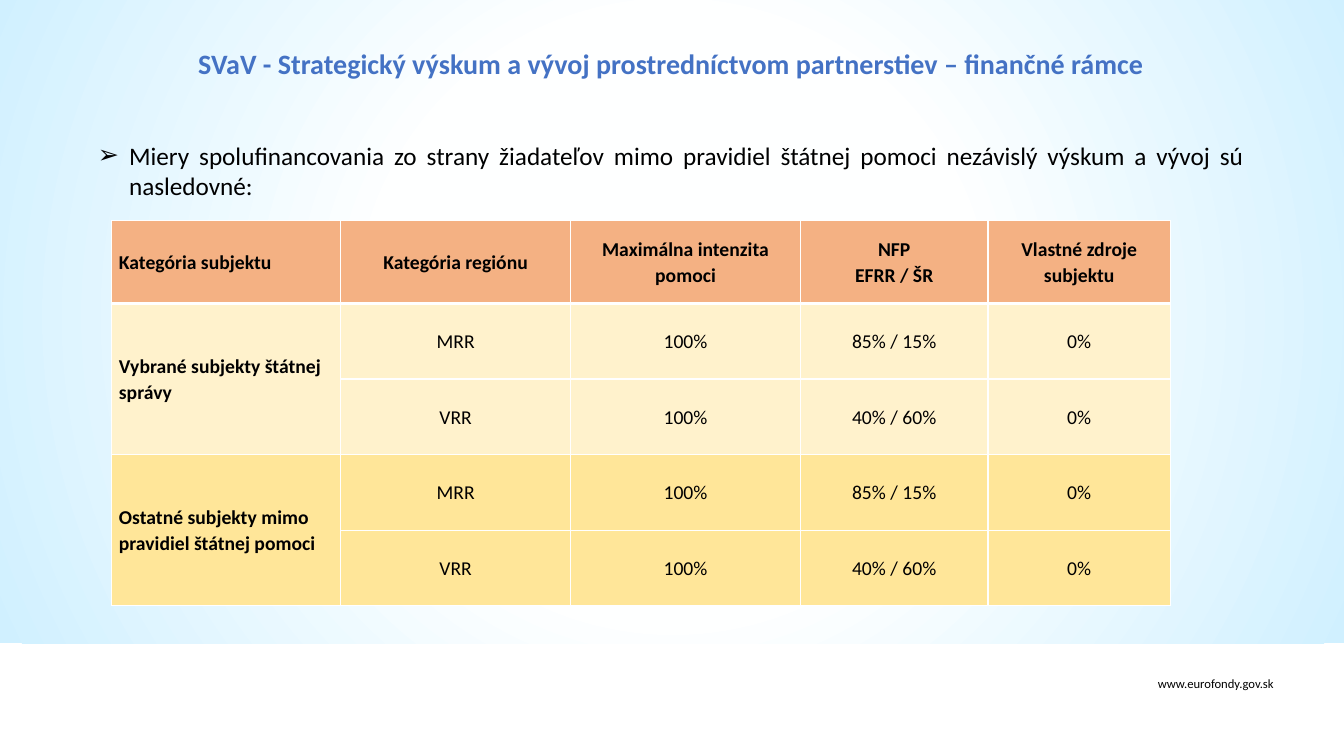
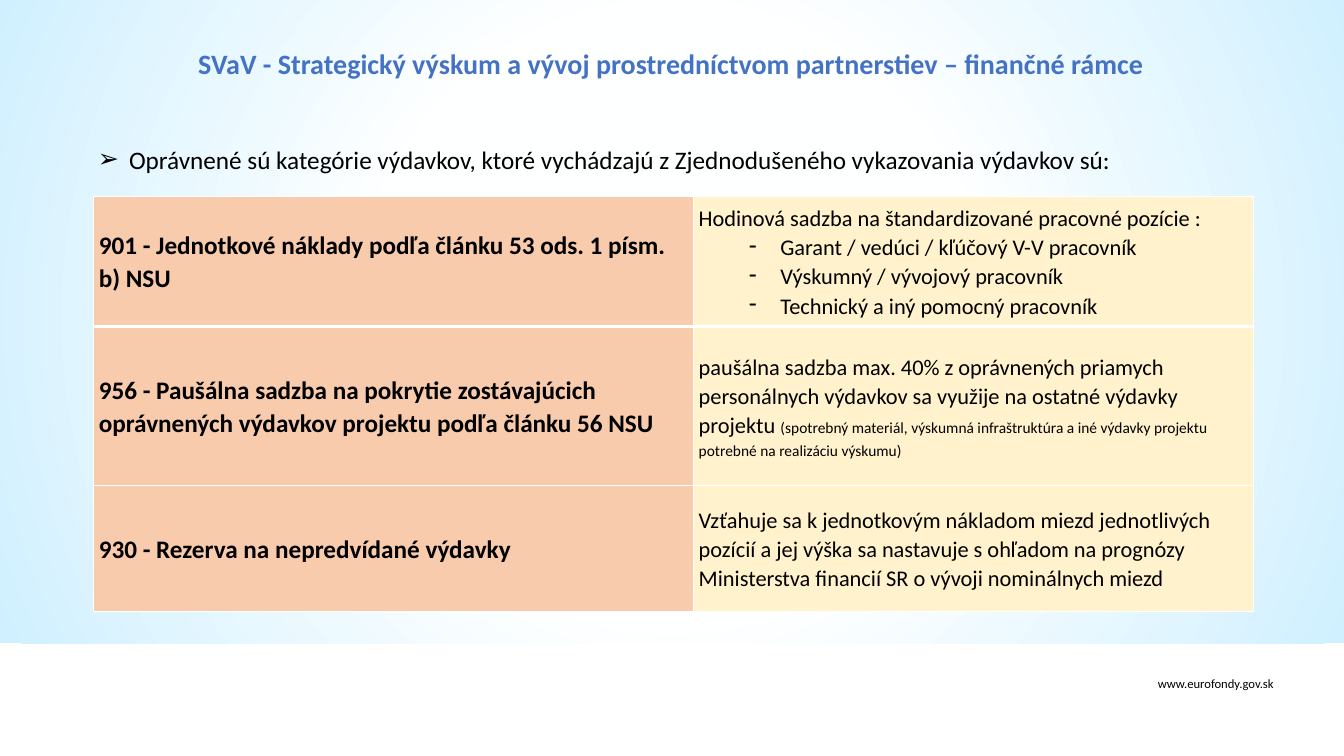
from lxml.etree import SubElement
from pptx import Presentation
from pptx.dml.color import RGBColor
from pptx.enum.shapes import MSO_SHAPE
from pptx.enum.text import MSO_ANCHOR as Anchor, MSO_AUTO_SIZE as Auto, PP_ALIGN as Align
from pptx.oxml import parse_xml
from pptx.oxml.ns import nsdecls, qn
from pptx.util import Inches, Pt

HUES = {
    "white": "FFFFFF", "text": "000000", "title": "4472C4",
    "glow": "FEFFFF", "sky": "D0F0FF", "head": "F4B183",
    "cream": "FFF2CC", "gold": "FFE699", "peach": "F8CBAD",
}
TITLE = "SVaV - Strategický výskum a vývoj prostredníctvom partnerstiev – finančné rámce"
SITE = "www.eurofondy.gov.sk"

RATES = [
    ["Kategória subjektu", "Kategória regiónu", "Maximálna intenzita pomoci",
     "NFP\nEFRR / ŠR", "Vlastné zdroje subjektu"],
    ["Vybrané subjekty štátnej správy", "MRR", "100%", "85% / 15%", "0%"],
    ["", "VRR", "100%", "40% / 60%", "0%"],
    ["Ostatné subjekty mimo pravidiel štátnej pomoci", "MRR", "100%", "85% / 15%", "0%"],
    ["", "VRR", "100%", "40% / 60%", "0%"],
]
COSTS = [
    ("901 - Jednotkové náklady podľa článku 53 ods. 1 písm. b) NSU",
     "Hodinová sadzba na štandardizované pracovné pozície :",
     ["Garant / vedúci / kľúčový V-V pracovník", "Výskumný / vývojový pracovník",
      "Technický a iný pomocný pracovník"], ""),
    ("956 - Paušálna sadzba na pokrytie zostávajúcich oprávnených výdavkov projektu "
     "podľa článku 56 NSU",
     "paušálna sadzba max. 40% z oprávnených priamych personálnych výdavkov sa využije "
     "na ostatné výdavky projektu ", [],
     "(spotrebný materiál, výskumná infraštruktúra a iné výdavky projektu potrebné na "
     "realizáciu výskumu)"),
    ("930 - Rezerva na nepredvídané výdavky",
     "Vzťahuje sa k jednotkovým nákladom miezd jednotlivých pozícií a jej výška sa "
     "nastavuje s ohľadom na prognózy Ministerstva financií SR o vývoji nominálnych miezd",
     [], ""),
]


def put(item, **form):
    """Set every attribute in the format dict."""
    for key, val in form.items():
        setattr(item, key, val)


def place(shape, left, top, width, height):
    """Move and size a shape, in inches."""
    put(shape, left=Inches(left), top=Inches(top),
        width=Inches(width), height=Inches(height))


def write(para, text, size, bold=False, hue="text"):
    """Add one formatted run to a paragraph."""
    run = para.add_run()
    run.text = text
    put(run.font, name="Calibri", size=Pt(size), bold=bold)
    run.font.color.rgb = RGBColor.from_string(HUES[hue])


def bullet(para, mark, left):
    """Give a paragraph a hanging bullet."""
    props = para._p.get_or_add_pPr()
    props.set("marL", str(Inches(left)))
    props.set("indent", str(Inches(-0.31)))
    SubElement(props, qn("a:buChar")).set("char", mark)


def glow(shape):
    """Fill a shape with the round sky gradient."""
    stops = "".join(
        f'<a:gs pos="{pos}000"><a:srgbClr val="{HUES[hue]}"/></a:gs>'
        for pos, hue in ((0, "glow"), (40, "glow"), (100, "sky")))
    shape.fill.background()
    props = shape.element.spPr
    blank = props.find(qn("a:noFill"))
    props.replace(blank, parse_xml(
        f'<a:gradFill {nsdecls("a")} rotWithShape="1"><a:gsLst>{stops}</a:gsLst>'
        '<a:path path="circle"><a:fillToRect l="50000" t="50000" r="50000" b="50000"/>'
        '</a:path></a:gradFill>'))


def dress(layout, slide):
    """Move the shared band, footer and title place to the layout."""
    band = slide.shapes.add_shape(
        MSO_SHAPE.RECTANGLE, 0, Inches(-0.1), Inches(13.35), Inches(6.48))
    band.shadow.inherit = False
    band.line.fill.background()
    glow(band)
    foot = slide.shapes.add_textbox(
        Inches(10.73), Inches(6.66), Inches(2), Inches(0.25))
    foot.text_frame.word_wrap = True
    para = foot.text_frame.paragraphs[0]
    para.alignment = Align.RIGHT
    write(para, SITE, 9)
    for spot, shape in enumerate((band, foot), 2):
        layout.shapes.element.insert(spot, shape.element)
    place(layout.placeholders[0], 0.87, 0.4, 11.57, 0.45)


def head(slide, text, top):
    """Write the title and the lead bullet."""
    frame = slide.shapes.title.text_frame
    put(frame, auto_size=Auto.NONE, vertical_anchor=Anchor.MIDDLE)
    write(frame.paragraphs[0], TITLE, 20, True, "title")
    body = slide.placeholders[1]
    place(body, 0.87, top, 11.57, 0.72)
    body.text_frame.auto_size = Auto.NONE
    para = body.text_frame.paragraphs[0]
    bullet(para, "➢", 0.31)
    put(para, alignment=Align.JUSTIFY, space_before=Pt(0))
    write(para, text, 18)


def edge(cell, row):
    """Draw white borders, thick below the first row."""
    props = cell._tc.get_or_add_tcPr()
    thick = {0: "B", 1: "T"}.get(row)
    for spot, side in enumerate("LRTB"):
        width = Pt(3 if side == thick else 1)
        props.insert(spot, parse_xml(
            f'<a:ln{side} {nsdecls("a")} w="{width}"><a:solidFill>'
            f'<a:srgbClr val="{HUES["white"]}"/></a:solidFill></a:ln{side}>'))


def grid(slide, left, top, cols, rows, pad, pick):
    """Add a table whose cell fills come from pick(row, col)."""
    table = slide.shapes.add_table(
        len(rows), len(cols), Inches(left), Inches(top),
        Inches(sum(cols)), Inches(sum(rows))).table
    put(table, first_row=False, horz_banding=False)
    for col, width in zip(table.columns, cols):
        col.width = Inches(width)
    for r, height in enumerate(rows):
        table.rows[r].height = Inches(height)
        for c in range(len(cols)):
            cell = table.cell(r, c)
            put(cell, vertical_anchor=Anchor.MIDDLE, margin_left=Inches(pad),
                margin_right=Inches(pad), margin_top=0, margin_bottom=0)
            cell.fill.solid()
            cell.fill.fore_color.rgb = RGBColor.from_string(HUES[pick(r, c)])
            edge(cell, r)
    return table


def line(cell, first=True, align=Align.LEFT):
    """Return the first or a new paragraph of a cell."""
    frame = cell.text_frame
    para = frame.paragraphs[0] if first else frame.add_paragraph()
    put(para, alignment=align, line_spacing=1.07)
    return para


def rates(slide):
    """Build the table of co-financing rates."""
    hues = ["head", "cream", "cream", "gold", "gold"]
    table = grid(slide, 1.11, 2.19, [2.27, 2.28, 2.28, 1.86, 1.81],
                 [0.82] + [0.75] * 4, 0.07, lambda r, c: hues[r])
    for r in (1, 3):
        table.cell(r, 0).merge(table.cell(r + 1, 0))
    for r, row in enumerate(RATES):
        for c, text in enumerate(row):
            align = Align.CENTER if c else Align.LEFT
            for n, part in enumerate(text.splitlines()):
                para = line(table.cell(r, c), n == 0, align)
                write(para, part, 14, r == 0 or c == 0)


def costs(slide):
    """Build the table of cost categories."""
    table = grid(slide, 0.93, 1.95, [5.95, 5.55], [1.29, 1.58, 1.25], 0.05,
                 lambda r, c: ("peach", "cream")[c])
    for r, (name, text, items, note) in enumerate(COSTS):
        write(line(table.cell(r, 0)), name, 18, True)
        cell = table.cell(r, 1)
        para = line(cell)
        write(para, text, 16)
        if note:
            write(para, note, 11)
        for item in items:
            para = line(cell, False)
            para.level = 1
            bullet(para, "-", 0.81)
            write(para, item, 16)


def main():
    """Build and save both slides."""
    deck = Presentation()
    put(deck, slide_width=Inches(13.33), slide_height=Inches(7.5))
    layout = deck.slide_layouts[1]
    first, second = (deck.slides.add_slide(layout) for _ in range(2))
    dress(layout, first)
    head(first, "Miery spolufinancovania zo strany žiadateľov mimo pravidiel štátnej "
         "pomoci nezávislý výskum a vývoj sú nasledovné:", 1.34)
    rates(first)
    head(second, "Oprávnené sú kategórie výdavkov, ktoré vychádzajú z Zjednodušeného "
         "vykazovania výdavkov sú:", 1.38)
    costs(second)
    deck.save("out.pptx")


if __name__ == "__main__":
    main()
